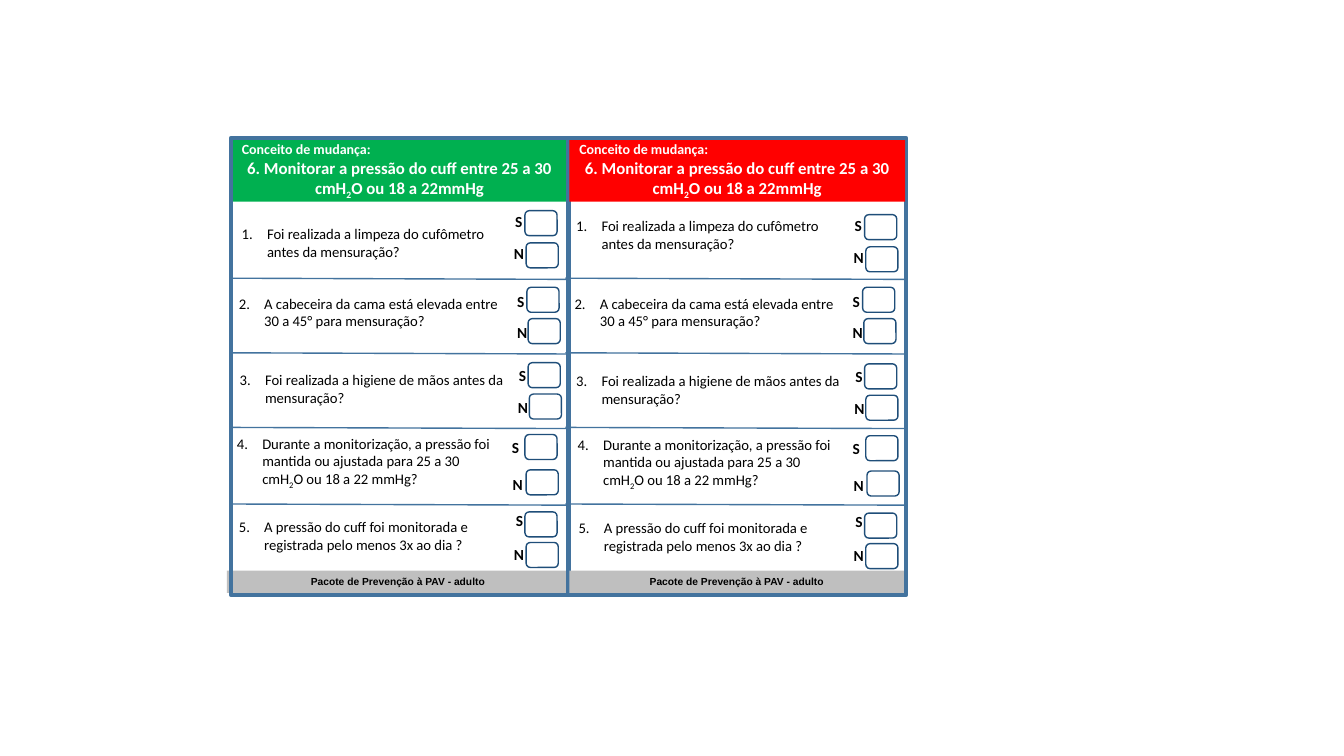
from lxml import etree
from pptx import Presentation
from pptx import util as u
from pptx.dml.color import RGBColor
from pptx.enum import shapes, text
from pptx.oxml import ns

GREEN = RGBColor(0x00, 0xB0, 0x50)
RED = RGBColor(0xFF, 0x00, 0x00)
GREY = RGBColor(0xBF, 0xBF, 0xBF)
STEEL = RGBColor(0x43, 0x73, 0x9E)
NAVY = RGBColor(0x1F, 0x4E, 0x79)
BLACK = RGBColor(0x00, 0x00, 0x00)
WHITE = RGBColor(0xFF, 0xFF, 0xFF)

CONCEPT = "Conceito de mudança:"
# Text between bars is set as subscript
GOAL = "6. Monitorar a pressão do cuff entre 25 a 30 cmH|2|O ou 18 a 22mmHg"
BUNDLE = "Pacote de Prevenção à PAV - adulto"

# Question, its box, S and N tick boxes (left, S top, N top), S and N labels,
# shift of the answers and of the question in the right-hand card (cm)
QUESTIONS = [
    ("Foi realizada a limpeza do cufômetro antes da mensuração?",
     (5.84, 5.18, 7.29, 1.88), (13.23, 5.31, 6.12),
     (12.73, 5.36), (12.7, 6.17), (8.56, 0.1), (8.43, -0.2)),
    ("A cabeceira da cama está elevada entre 30 a 45° para mensuração?",
     (5.77, 7.04, 7.19, 1.65), (13.28, 7.24, 8.03),
     (12.78, 7.37), (12.78, 8.18), (8.46, 0), (8.46, 0)),
    ("Foi realizada a higiene de mãos antes da mensuração?",
     (5.79, 8.92, 7.21, 1.75), (13.31, 9.14, 9.93),
     (12.83, 9.22), (12.8, 10.06), (8.48, 0.03), (8.48, 0.03)),
    ("Durante a monitorização, a pressão foi mantida ou ajustada para "
     "25 a 30 cmH|2|O ou 18 a 22 mmHg?",
     (5.72, 10.87, 7.21, 1.55), (13.23, 10.95, 11.84),
     (12.65, 11.05), (12.67, 11.99), (8.59, 0.03), (8.59, 0.03)),
    ("A pressão do cuff foi monitorada e registrada pelo menos 3x ao dia ?",
     (5.77, 12.88, 6.93, 1.24), (13.23, 12.9, 13.67),
     (12.75, 12.88), (12.7, 13.77), (8.56, 0.03), (8.56, 0.03)),
]
DIVIDER_TOPS = (7.01, 8.89, 10.77, 12.7)


def write(paragraph, content, size=10.5, font="Calibri", color=BLACK,
          bold=False, align=text.PP_ALIGN.LEFT, number=None):
    paragraph.alignment = align
    for index, part in enumerate(content.split("|")):
        run = paragraph.add_run()
        run.text = part
        run.font.size = u.Pt(size)
        run.font.name = font
        run.font.bold = bold
        run.font.color.rgb = color
        if index % 2:
            run.font._element.set("baseline", "-25000")
    if number:
        properties = paragraph._p.get_or_add_pPr()
        properties.set("marL", str(u.Cm(0.64)))
        properties.set("indent", str(-u.Cm(0.64)))
        bullet = etree.SubElement(properties, ns.qn("a:buAutoNum"))
        bullet.set("type", "arabicPeriod")
        bullet.set("startAt", str(number))


class Checklist:
    def __init__(self, slide):
        self.slide = slide

    def shape(self, box, fill=None, line=None, weight=1, rounded=False, parent=None):
        kind = shapes.MSO_SHAPE.ROUNDED_RECTANGLE if rounded else shapes.MSO_SHAPE.RECTANGLE
        item = (parent or self.slide).shapes.add_shape(kind, *map(u.Cm, box))
        item.shadow.inherit = False
        if fill is None:
            item.fill.background()
        else:
            item.fill.solid()
            item.fill.fore_color.rgb = fill
        if line is None:
            item.line.fill.background()
        else:
            item.line.color.rgb = line
            item.line.width = u.Pt(weight)
        return item

    def label(self, box, content, parent, **style):
        frame = parent.shapes.add_textbox(*map(u.Cm, box)).text_frame
        frame.word_wrap = True
        frame.vertical_anchor = text.MSO_ANCHOR.MIDDLE
        write(frame.paragraphs[0], content, **style)

    def divider(self, left, top):
        rule = self.slide.shapes.add_connector(
            shapes.MSO_CONNECTOR.STRAIGHT,
            *map(u.Cm, (left, top, left + 8.56, top + 0.03)))
        rule.line.color.rgb = STEEL
        rule.line.width = u.Pt(1)
        etree.SubElement(rule._element.spPr, ns.qn("a:effectLst"))

    def title(self, box, fill):
        header = self.slide.shapes.title
        header.left, header.top, header.width, header.height = map(u.Cm, box)
        header.fill.solid()
        header.fill.fore_color.rgb = fill
        return header

    def heading(self, header):
        frame = header.text_frame
        frame.word_wrap = True
        frame.auto_size = text.MSO_AUTO_SIZE.NONE
        frame.vertical_anchor = text.MSO_ANCHOR.MIDDLE
        write(frame.paragraphs[0], CONCEPT, size=10, color=WHITE, bold=True)
        write(frame.add_paragraph(), GOAL, size=12, color=WHITE, bold=True,
              align=text.PP_ALIGN.CENTER)

    def footer(self, left, width):
        frame = self.shape((left, 14.38, width, 0.56), fill=GREY).text_frame
        frame.word_wrap = True
        frame.auto_size = text.MSO_AUTO_SIZE.SHAPE_TO_FIT_TEXT
        frame.vertical_anchor = text.MSO_ANCHOR.TOP
        write(frame.paragraphs[0], BUNDLE, size=7.3, font="Arial", bold=True,
              align=text.PP_ALIGN.CENTER)

    def outline(self, left):
        self.shape((left, 3.48, 8.51, 11.51), line=STEEL, weight=3)

    def questions(self, column):
        for number, row in enumerate(QUESTIONS, 1):
            question, box, ticks, yes, no, answer_shift, question_shift = row
            dx, dy = (column * step for step in answer_shift)
            qx, qy = (column * step for step in question_shift)
            group = self.slide.shapes.add_group_shape()
            left, top, width, height = box
            self.label((left + qx, top + qy, width, height), question, group,
                       number=number)
            tick_left, *tick_tops = ticks
            answers = zip("SN", tick_tops, (yes, no), (0, 0.03), (0.46, 0.41))
            for letter, tick_top, (x, y), nudge, label_height in answers:
                self.shape((tick_left + nudge + dx, tick_top + dy, 0.81, 0.63),
                           line=NAVY, rounded=True, parent=group)
                self.label((x + dx, y + dy, 0.61, label_height), letter, group,
                           size=11, bold=True, align=text.PP_ALIGN.CENTER)

    def dividers(self, left):
        for top in DIVIDER_TOPS:
            self.divider(left, top)


def main():
    deck = Presentation()
    deck.slide_width, deck.slide_height = u.Cm(33.87), u.Cm(19.05)
    card = Checklist(deck.slides.add_slide(deck.slide_layouts[5]))

    # Green card: the outline lies over the header and footer
    card.footer(5.72, 8.61)
    card.heading(card.title((5.84, 3.53, 8.46, 1.55), GREEN))
    card.outline(5.82)
    card.questions(0)
    card.dividers(5.79)

    # Red card: the header and footer lie over the outline
    card.outline(14.33)
    card.footer(14.35, 8.43)
    card.heading(card.shape((14.35, 3.53, 8.46, 1.55), fill=RED))
    card.questions(1)
    card.dividers(14.25)

    deck.save("out.pptx")


if __name__ == "__main__":
    main()
